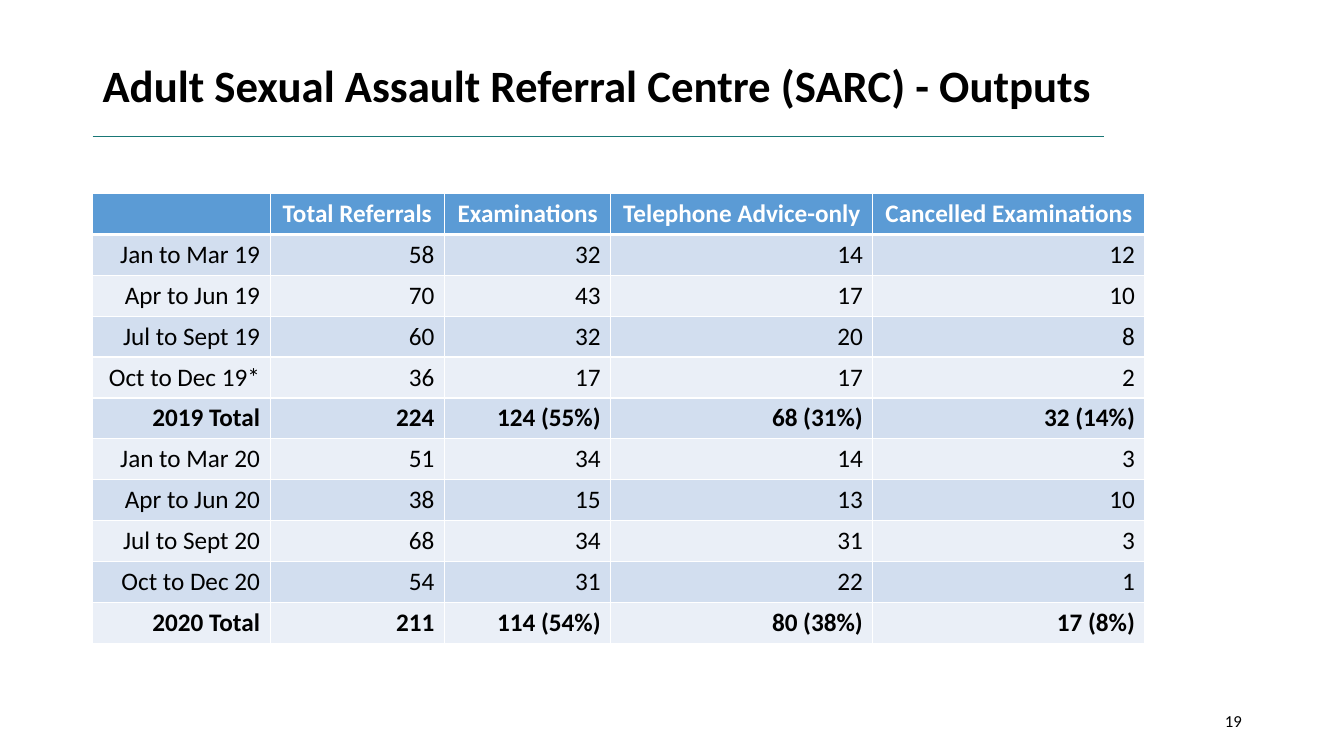
from lxml import etree
from pptx import Presentation
from pptx.dml.color import RGBColor
from pptx.enum.shapes import MSO_CONNECTOR
from pptx.enum.text import MSO_ANCHOR, PP_ALIGN
from pptx.oxml.ns import qn
from pptx.util import Pt

STRAIGHT = MSO_CONNECTOR.STRAIGHT
MIDDLE = MSO_ANCHOR.MIDDLE
LEFT, CENTER, RIGHT = PP_ALIGN.LEFT, PP_ALIGN.CENTER, PP_ALIGN.RIGHT

FONT = "Calibri"
COLORS = {
    "text": "000000",
    "rule": "197776",
    "header": "5B9BD5",
    "odd_row": "D2DEEF",
    "even_row": "EAEFF7",
    "white": "FFFFFF",
}

MARGIN = 66.24
COLUMN_WIDTHS = [126.72, 124.56, 118.8, 187.2, 194.4]
ROW_HEIGHT = 29.2
OUTPUTS = [
    ["", "Total Referrals", "Examinations", "Telephone Advice-only", "Cancelled Examinations"],
    ["Jan to Mar 19", "58", "32", "14", "12"],
    ["Apr to Jun 19", "70", "43", "17", "10"],
    ["Jul to Sept 19", "60", "32", "20", "8"],
    ["Oct to Dec 19*", "36", "17", "17", "2"],
    ["2019 Total", "224", "124 (55%)", "68 (31%)", "32 (14%)"],
    ["Jan to Mar 20", "51", "34", "14", "3"],
    ["Apr to Jun 20", "38", "15", "13", "10"],
    ["Jul to Sept 20", "68", "34", "31", "3"],
    ["Oct to Dec 20", "54", "31", "22", "1"],
    ["2020 Total", "211", "114 (54%)", "80 (38%)", "17 (8%)"],
]


def color(name):
    return RGBColor.from_string(COLORS[name])


def write(frame, text, size, align, bold=False, color_name="text"):
    frame.text = text
    para = frame.paragraphs[0]
    para.alignment = align
    for span in para.runs:
        span.font.name = FONT
        span.font.size = Pt(size)
        span.font.bold = bold
        span.font.color.rgb = color(color_name)
    return para


def add_text(slide, text, left, top, width, height, size, align, bold=False):
    box = slide.shapes.add_textbox(Pt(left), Pt(top), Pt(width), Pt(height))
    frame = box.text_frame
    frame.word_wrap = True
    frame.vertical_anchor = MIDDLE
    return write(frame, text, size, align, bold)


def add_rule(slide, left, right, top):
    rule = slide.shapes.add_connector(STRAIGHT, Pt(left), Pt(top), Pt(right), Pt(top))
    rule.line.color.rgb = color("rule")
    rule.line.width = Pt(0.5)
    etree.SubElement(rule._element.spPr, qn("a:effectLst"))


def set_borders(cell, top, bottom):
    properties = cell._tc.get_or_add_tcPr()
    for side, width in (("L", 1), ("R", 1), ("T", top), ("B", bottom)):
        border = etree.SubElement(properties, qn("a:ln" + side), w=str(Pt(width)))
        fill = etree.SubElement(border, qn("a:solidFill"))
        etree.SubElement(fill, qn("a:srgbClr"), val=COLORS["white"])


def style_cell(cell, text, row, is_total):
    is_header = row == 0
    # The line between header and body is thicker than the others
    set_borders(cell, top=3 if row == 1 else 1, bottom=3 if is_header else 1)
    cell.fill.solid()
    band = "odd_row" if row % 2 else "even_row"
    cell.fill.fore_color.rgb = color("header" if is_header else band)
    write(
        cell.text_frame, text, 18,
        CENTER if is_header else RIGHT,
        bold=is_header or is_total,
        color_name="white" if is_header else "text",
    )


def add_outputs_table(slide, left, top):
    shape = slide.shapes.add_table(
        len(OUTPUTS), len(COLUMN_WIDTHS), Pt(left), Pt(top),
        Pt(sum(COLUMN_WIDTHS)), Pt(ROW_HEIGHT * len(OUTPUTS)),
    )
    table = shape.table
    for column, width in zip(table.columns, COLUMN_WIDTHS):
        column.width = Pt(width)
    for row, values in enumerate(OUTPUTS):
        table.rows[row].height = Pt(ROW_HEIGHT)
        is_total = values[0].endswith("Total")
        for column, text in enumerate(values):
            style_cell(table.cell(row, column), text, row, is_total)


def main():
    deck = Presentation()
    deck.slide_width, deck.slide_height = Pt(960), Pt(540)
    slide = deck.slides.add_slide(deck.slide_layouts[6])

    # Title and the line under it
    add_rule(slide, MARGIN, 788.4, 97.2)
    title = add_text(
        slide, "Adult Sexual Assault Referral Centre (SARC) - Outputs",
        MARGIN, 28.8, 722.16, 68.4, 32, LEFT, bold=True,
    )
    title.line_spacing = 0.9

    # Quarterly outputs
    add_outputs_table(slide, MARGIN, 138.24)

    # Page number
    add_text(slide, "19", 678.24, 500.4, 216, 28.8, 12, RIGHT)

    deck.save("out.pptx")


if __name__ == "__main__":
    main()
